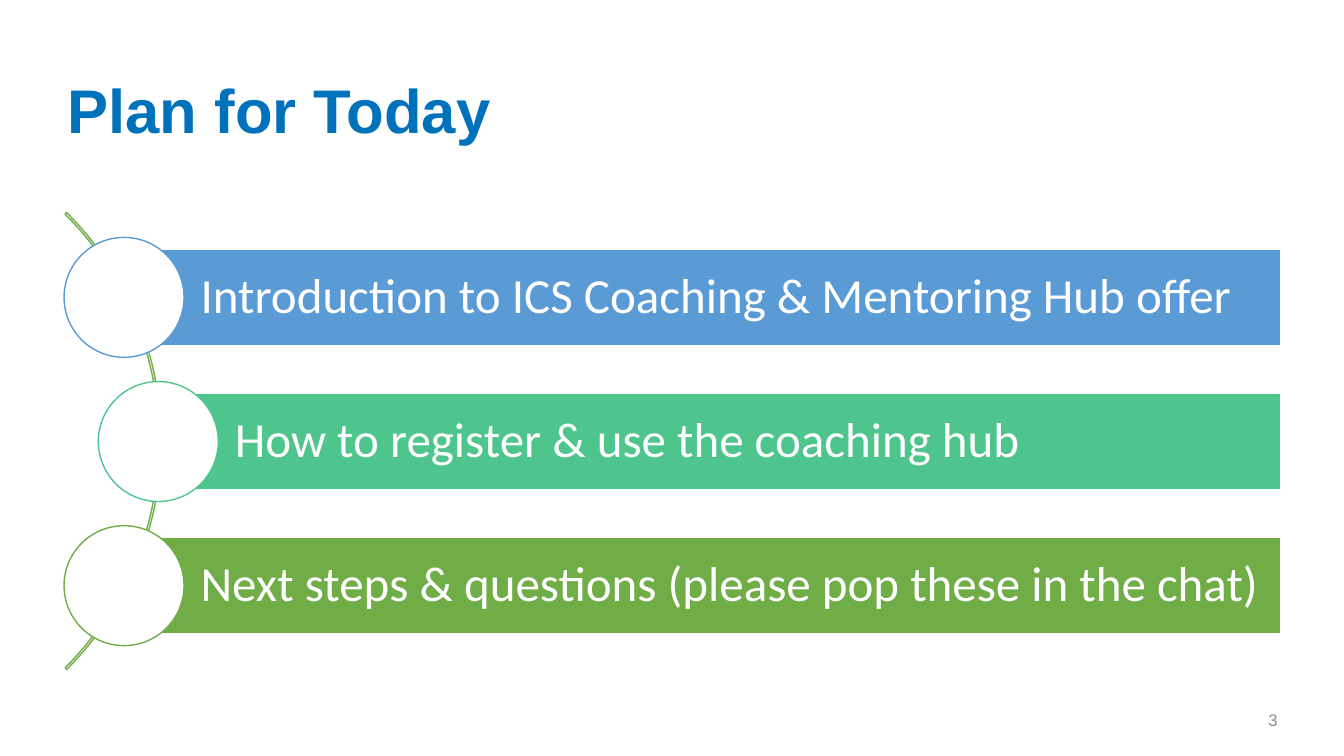
from pptx import Presentation
from pptx import util as u
from pptx.dml.color import RGBColor
from pptx.enum import shapes, text

KIND = shapes.MSO_SHAPE
ALIGN = text.PP_ALIGN


def tint(code):
    return RGBColor.from_string(code)


class Deck:
    """Holds the style and current slide, and draws each kind of element."""

    head_font = "Arial"
    body_font = "Calibri"
    white = "FFFFFF"

    def __init__(self):
        self.show = Presentation()
        self.show.slide_width = u.Inches(13.33)
        self.show.slide_height = u.Inches(7.5)
        self.slide = self.show.slides.add_slide(self.show.slide_layouts[5])

    def label(self, shape, words, size, font, color, align=ALIGN.LEFT, bold=False):
        frame = shape.text_frame
        frame.text = words
        frame.word_wrap = True
        frame.vertical_anchor = text.MSO_ANCHOR.MIDDLE
        line = frame.paragraphs[0]
        line.alignment = align
        line.line_spacing = 0.9
        face = line.runs[0].font
        face.size = u.Pt(size)
        face.name = font
        face.bold = bold
        face.color.rgb = tint(color)

    def title(self, words, box):
        shape = self.slide.shapes.title
        shape.left, shape.top, shape.width, shape.height = map(u.Inches, box)
        self.label(shape, words, 44, self.head_font, "0072BC", bold=True)

    def shape(self, kind, box, line, fill=None):
        shape = self.slide.shapes.add_shape(kind, *map(u.Inches, box))
        shape.shadow.inherit = False
        shape.line.color.rgb = tint(line)
        shape.line.width = u.Pt(1)
        if fill:
            shape.fill.solid()
            shape.fill.fore_color.rgb = tint(fill)
        else:
            shape.fill.background()
        return shape

    def arc(self, box, color):
        curve = self.shape(KIND.BLOCK_ARC, box, color)
        for i, value in enumerate((189, 27, 0.0034)):
            curve.adjustments[i] = value

    def step(self, words, left, mid, color):
        right, tall, disc = 12.7, 0.95, 1.19
        bar = self.shape(KIND.RECTANGLE, (left, mid - tall / 2, right - left, tall),
                         self.white, color)
        self.label(bar, words, 35, self.body_font, self.white)
        frame = bar.text_frame
        frame.margin_left = u.Inches(0.76)
        frame.margin_right = frame.margin_top = frame.margin_bottom = u.Inches(0.1)
        self.shape(KIND.OVAL, (left - disc / 2, mid - disc / 2, disc, disc),
                   color, self.white)

    def number(self, words, box):
        shape = self.slide.shapes.add_textbox(*map(u.Inches, box))
        self.label(shape, words, 12, self.head_font, "8C8C8C", ALIGN.RIGHT)


def main():
    deck = Deck()
    deck.title("Plan for Today", (0.57, 0.4, 12.2, 1.45))
    deck.arc((-4.81, 1.17, 6.41, 6.41), "70AD47")
    steps = [
        ("Introduction to ICS Coaching & Mentoring Hub offer", 1.23, "5B9BD5"),
        ("How to register & use the coaching hub", 1.57, "4DC58D"),
        ("Next steps & questions (please pop these in the chat)", 1.23, "70AD47"),
    ]
    for i, (words, left, color) in enumerate(steps):
        deck.step(words, left, 2.95 + 1.43 * i, color)
    deck.number("3", (9.42, 6.95, 3.35, 0.4))
    deck.show.save("out.pptx")


if __name__ == "__main__":
    main()
